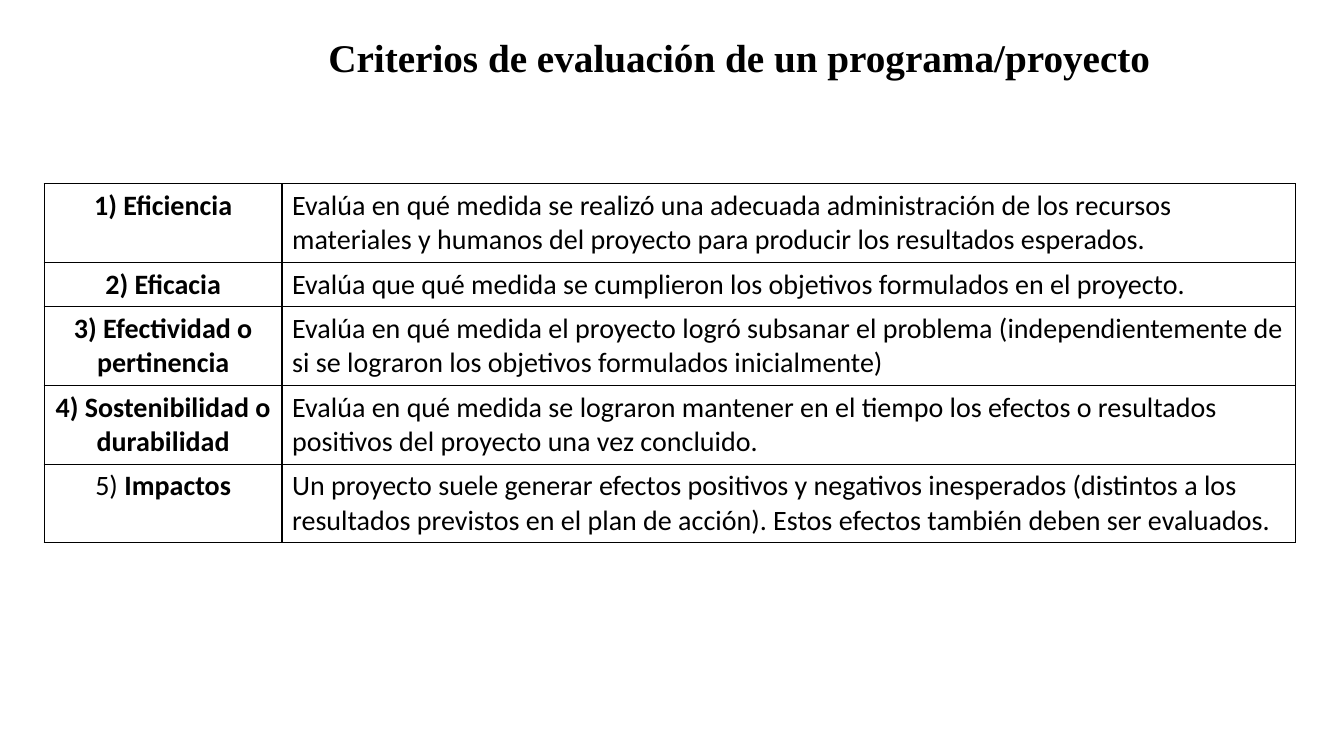
import dataclasses

import pptx
import pptx.dml.color
import pptx.enum.text
import pptx.oxml
import pptx.oxml.ns
import pptx.util

WIDTH = pptx.util.Inches(13.33)
HEIGHT = pptx.util.Inches(7.5)
BLACK = "000000"
LABEL_SHARE = 0.19


@dataclasses.dataclass(frozen=True)
class Area:
    left: float
    top: float
    width: float
    height: float


@dataclasses.dataclass(frozen=True)
class Criterion:
    number: str
    name: str
    meaning: str
    bold_number: bool = True


TITLE_AREA = Area(0.02, 0, 1.06, 0.22)
TABLE_AREA = Area(0.033, 0.243, 0.931, 0.467)

CRITERIA = [
    Criterion("1) ", "Eficiencia",
              "Evalúa en qué medida se realizó una adecuada administración de los recursos "
              "materiales y humanos del proyecto para producir los resultados esperados."),
    Criterion("2) ", "Eficacia",
              "Evalúa que qué medida se cumplieron los objetivos formulados en el proyecto."),
    Criterion("3) ", "Efectividad o pertinencia",
              "Evalúa en qué medida el proyecto logró subsanar el problema (independientemente de "
              "si se lograron los objetivos formulados inicialmente)"),
    Criterion("4) ", "Sostenibilidad o durabilidad",
              "Evalúa en qué medida se lograron mantener en el tiempo los efectos o resultados "
              "positivos del proyecto una vez concluido."),
    Criterion("5) ", "Impactos",
              "Un proyecto suele generar efectos positivos y negativos inesperados (distintos a los "
              "resultados previstos en el plan de acción). Estos efectos también deben ser evaluados.",
              bold_number=False),
]


def color(value: str) -> pptx.dml.color.RGBColor:
    return pptx.dml.color.RGBColor.from_string(value)


def place(area: Area) -> tuple[int, int, int, int]:
    return (round(area.left * WIDTH), round(area.top * HEIGHT),
            round(area.width * WIDTH), round(area.height * HEIGHT))


def format_run(span, font: str, size: float, bold: bool) -> None:
    span.font.name = font
    span.font.size = pptx.util.Pt(size)
    span.font.bold = bold
    span.font.color.rgb = color(BLACK)


def draw_title(page, text: str) -> None:
    box = page.shapes.title
    box.left, box.top, box.width, box.height = place(TITLE_AREA)
    frame = box.text_frame
    frame.text = text
    frame.word_wrap = True
    frame.auto_size = pptx.enum.text.MSO_AUTO_SIZE.NONE
    frame.vertical_anchor = pptx.enum.text.MSO_ANCHOR.MIDDLE
    frame.margin_bottom = pptx.util.Inches(0.49)
    para = frame.paragraphs[0]
    para.alignment = pptx.enum.text.PP_ALIGN.CENTER
    para.line_spacing = 0.8
    format_run(para.runs[0], "Times New Roman", 28, True)


def frame_cell(cell) -> None:
    properties = cell._tc.get_or_add_tcPr()
    for side in ("lnL", "lnR", "lnT", "lnB"):
        properties.append(pptx.oxml.parse_xml(
            f'<a:{side} {pptx.oxml.ns.nsdecls("a")} w="{pptx.util.Pt(1)}">'
            f'<a:solidFill><a:srgbClr val="{BLACK}"/></a:solidFill></a:{side}>'))
    cell.fill.background()


def draw_criteria(page, criteria: list[Criterion]) -> None:
    box = page.shapes.add_table(len(criteria), 2, *place(TABLE_AREA))
    table = box.table
    table.first_row = False
    table.horz_banding = False
    total = box.width
    table.columns[0].width = round(total * LABEL_SHARE)
    table.columns[1].width = total - table.columns[0].width
    for row, criterion in zip(table.rows, criteria):
        row.height = round(HEIGHT * 0.055)
        label, meaning = row.cells
        para = label.text_frame.paragraphs[0]
        para.alignment = pptx.enum.text.PP_ALIGN.CENTER
        for text, bold in ((criterion.number, criterion.bold_number), (criterion.name, True)):
            span = para.add_run()
            span.text = text
            format_run(span, "Calibri", 20, bold)
        meaning.text_frame.text = criterion.meaning
        format_run(meaning.text_frame.paragraphs[0].runs[0], "Calibri", 20, False)
        for cell in row.cells:
            frame_cell(cell)
    box.height = round(TABLE_AREA.height * HEIGHT)


def main() -> None:
    deck = pptx.Presentation()
    deck.slide_width = WIDTH
    deck.slide_height = HEIGHT
    page = deck.slides.add_slide(deck.slide_layouts.get_by_name("Title Only"))
    draw_title(page, "Criterios de evaluación de un programa/proyecto")
    draw_criteria(page, CRITERIA)
    deck.save("out.pptx")


if __name__ == "__main__":
    main()
